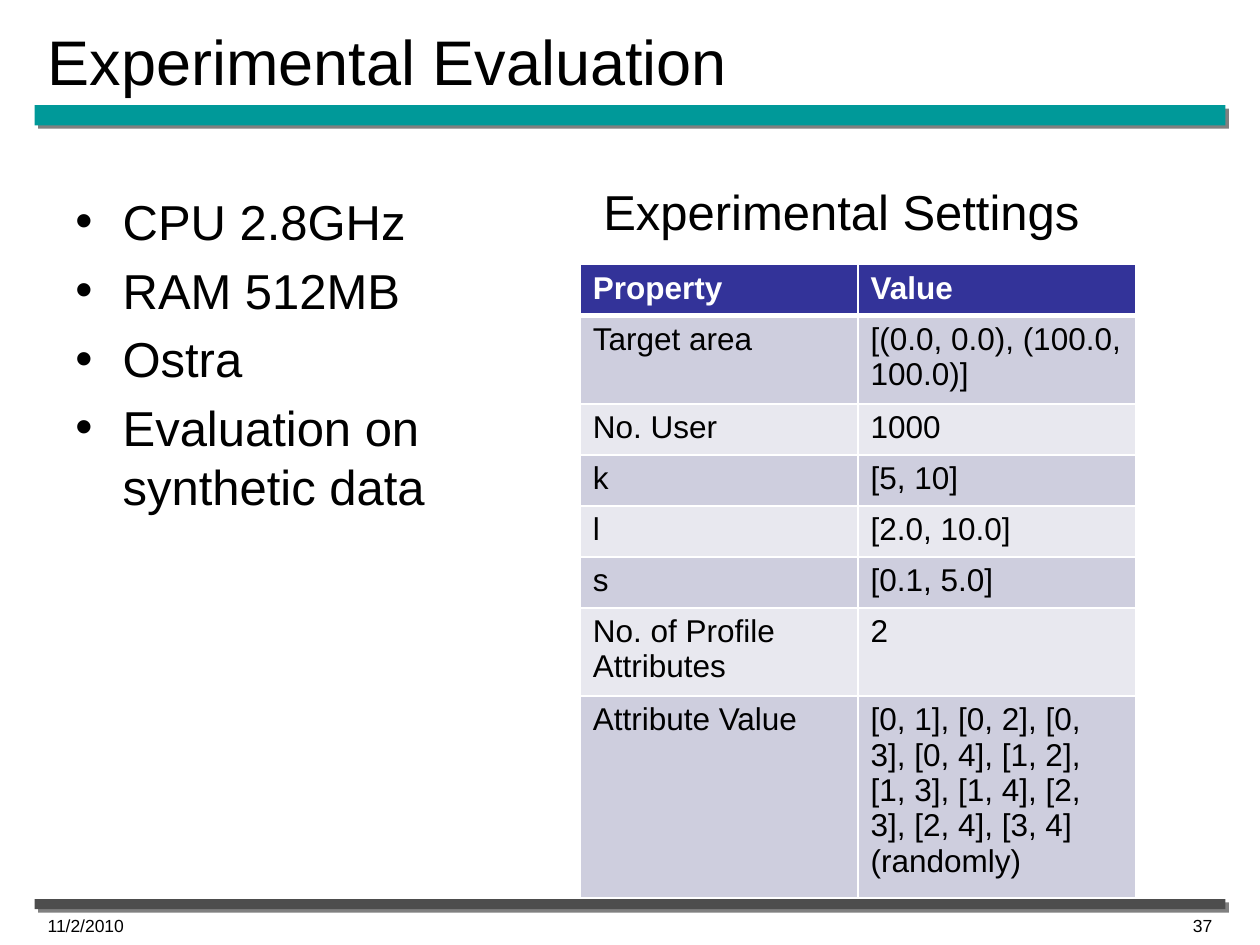
from lxml.etree import SubElement
from pptx import Presentation
from pptx.dml.color import RGBColor
from pptx.enum.shapes import MSO_SHAPE
from pptx.enum.text import MSO_ANCHOR, PP_ALIGN
from pptx.oxml import parse_xml
from pptx.oxml.ns import nsdecls, qn
from pptx.util import Inches, Pt

BLACK = RGBColor(0x00, 0x00, 0x00)
WHITE = RGBColor(0xFF, 0xFF, 0xFF)
TEAL = RGBColor(0x00, 0x99, 0x99)
DARK_GRAY = RGBColor(0x4D, 0x4D, 0x4D)
SHADOW_GRAY = RGBColor(0x80, 0x80, 0x80)
NAVY = RGBColor(0x33, 0x33, 0x99)
LAVENDER = RGBColor(0xCE, 0xCE, 0xDE)
PALE = RGBColor(0xE8, 0xE8, 0xEF)

presentation = Presentation()
presentation.slide_width = Inches(10)
presentation.slide_height = Inches(7.5)
COLUMN = presentation.slide_width // 100
ROW = presentation.slide_height // 75
slide = presentation.slides.add_slide(presentation.slide_layouts[6])


def add_text(paragraph, text, size, color=BLACK, bold=False):
    run = paragraph.add_run()
    run.text = text
    run.font.name = "Arial"
    run.font.size = Pt(size)
    run.font.bold = bold
    run.font.color.rgb = color


def add_frame(left, top, width, height, anchor=MSO_ANCHOR.TOP):
    box = slide.shapes.add_textbox(
        int(left * COLUMN), int(top * ROW), int(width * COLUMN), int(height * ROW)
    )
    frame = box.text_frame
    frame.word_wrap = True
    frame.vertical_anchor = anchor
    return frame


for left, top, height, color in ((2.75, 8.35, 1.6, TEAL), (2.75, 71.35, 0.8, DARK_GRAY)):
    bar = slide.shapes.add_shape(
        MSO_SHAPE.RECTANGLE,
        int(left * COLUMN), int(top * ROW), int(94.5 * COLUMN), int(height * ROW),
    )
    bar.fill.solid()
    bar.fill.fore_color.rgb = color
    bar.line.fill.background()
    bar.shadow.inherit = False
    effects = bar._element.spPr.find(qn("a:effectLst"))
    effects.append(parse_xml(
        f'<a:outerShdw {nsdecls("a")} dist="{Pt(2.8)}" dir="2700000" algn="ctr" rotWithShape="0">'
        f'<a:srgbClr val="{SHADOW_GRAY}"/></a:outerShdw>'
    ))

title = add_frame(2.8, 1.25, 94.5, 7.1, MSO_ANCHOR.MIDDLE)
add_text(title.paragraphs[0], "Experimental Evaluation", 36)

bullets = add_frame(5, 14.7, 48.1, 52.3)
bullet_items = ("CPU 2.8GHz", "RAM 512MB", "Ostra", "Evaluation on\nsynthetic data")
for index, item in enumerate(bullet_items):
    paragraph = bullets.add_paragraph() if index else bullets.paragraphs[0]
    paragraph.space_before = Pt(5.6)
    properties = paragraph._p.get_or_add_pPr()
    properties.set("marL", str(int(3.75 * COLUMN)))
    properties.set("indent", str(int(-3.75 * COLUMN)))
    SubElement(properties, qn("a:buFont"), typeface="Arial")
    SubElement(properties, qn("a:buChar"), char="•")
    for line_index, line in enumerate(item.split("\n")):
        if line_index:
            paragraph.add_line_break()
        add_text(paragraph, line, 28)

heading = add_frame(46.9, 13.9, 42.5, 52.3).paragraphs[0]
heading.space_before = Pt(5.6)
add_text(heading, "Experimental Settings", 28)

footers = ((2.8, "11/2/2010", PP_ALIGN.LEFT), (73.9, "37", PP_ALIGN.RIGHT))
for left, text, alignment in footers:
    paragraph = add_frame(left, 72.15, 23.3, 2.8).paragraphs[0]
    paragraph.alignment = alignment
    add_text(paragraph, text, 10)

settings = (
    ("Property", "Value", 1),
    ("Target area", "[(0.0, 0.0), (100.0, 100.0)]", 2),
    ("No. User", "1000", 1),
    ("k", "[5, 10]", 1),
    ("l", "[2.0, 10.0]", 1),
    ("s", "[0.1, 5.0]", 1),
    ("No. of Profile Attributes", "2", 2),
    ("Attribute Value", "[0, 1], [0, 2], [0, 3], [0, 4], [1, 2], [1, 3], "
     "[1, 4], [2, 3], [2, 4], [3, 4] (randomly)", 5),
)
row_heights = [int((4.05 if lines == 1 else 1 + 2.8 * lines) * ROW) for *_, lines in settings]
table = slide.shapes.add_table(
    len(settings), 2,
    int(46.05 * COLUMN), 21 * ROW, int(44.1 * COLUMN), sum(row_heights),
).table
for row_index, (*values, _) in enumerate(settings):
    table.rows[row_index].height = row_heights[row_index]
    is_header = row_index == 0
    for column_index, value in enumerate(values):
        cell = table.cell(row_index, column_index)
        cell_properties = cell._tc.get_or_add_tcPr()
        for side in ("L", "R", "T", "B"):
            thick = (is_header and side == "B") or (row_index == 1 and side == "T")
            border = SubElement(cell_properties, qn(f"a:ln{side}"), w=str(Pt(3 if thick else 1)))
            fill = SubElement(border, qn("a:solidFill"))
            SubElement(fill, qn("a:srgbClr"), val=str(WHITE))
        cell.fill.solid()
        cell.fill.fore_color.rgb = NAVY if is_header else (PALE, LAVENDER)[row_index % 2]
        add_text(cell.text_frame.paragraphs[0], value, 18, WHITE if is_header else BLACK, is_header)

presentation.save("out.pptx")
